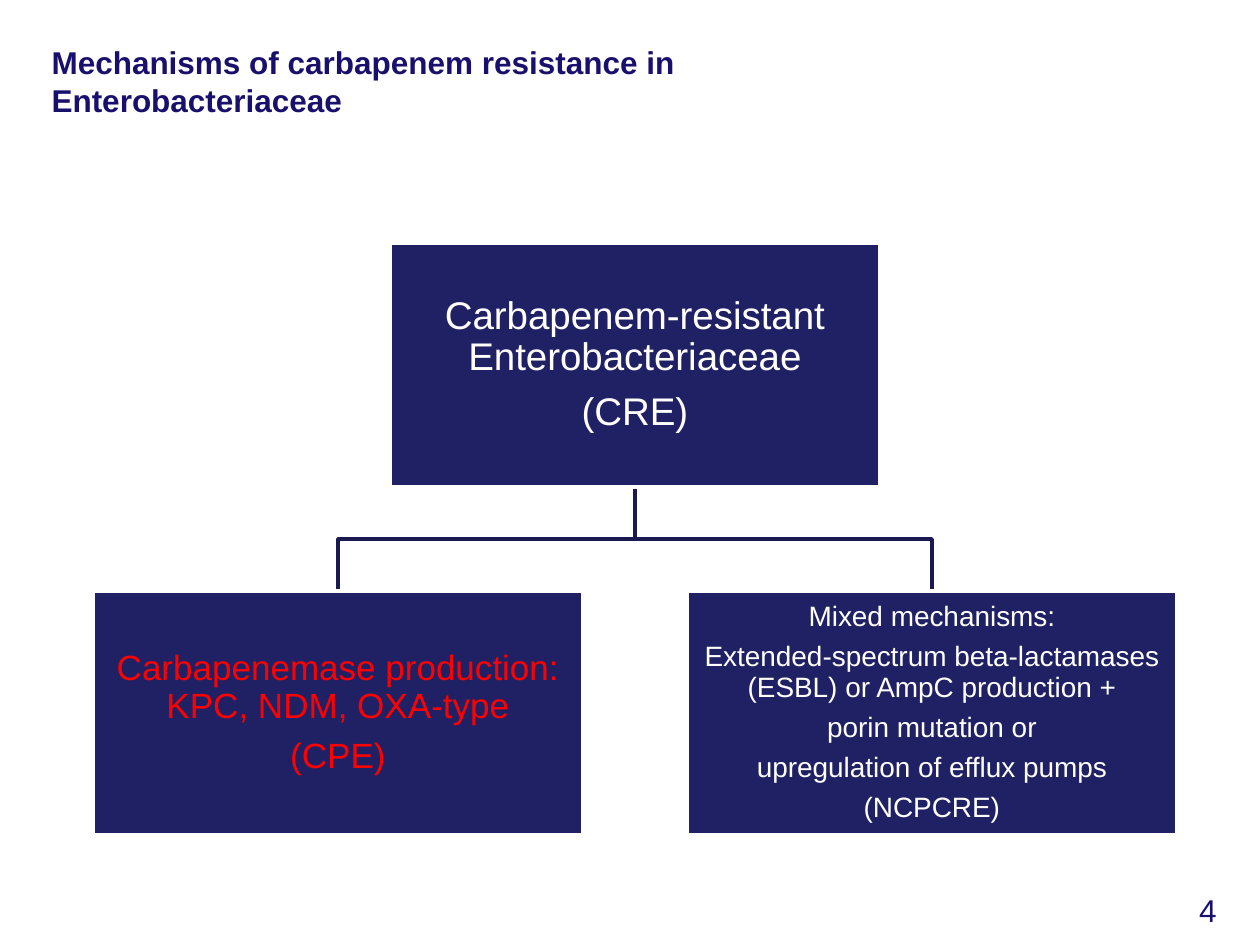
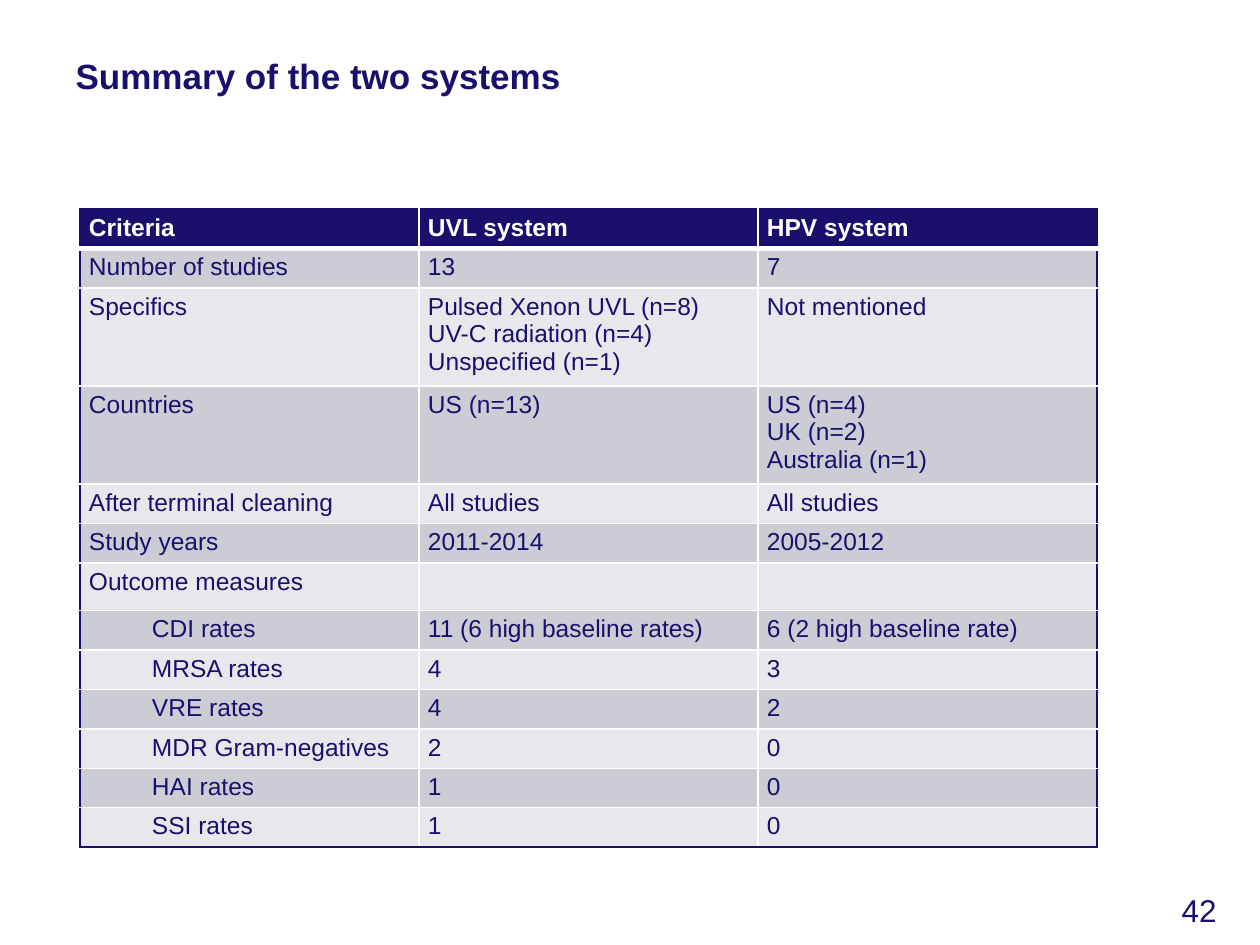
"""Build two slides: a tree of carbapenem resistance mechanisms and a table comparing two systems."""
from lxml import etree
from pptx import Presentation
from pptx.dml.color import RGBColor
from pptx.enum.shapes import MSO_SHAPE
from pptx.enum.text import MSO_ANCHOR, MSO_AUTO_SIZE, PP_ALIGN
from pptx.oxml.ns import qn
from pptx.util import Emu, Pt

RECT = MSO_SHAPE.RECTANGLE
MIDDLE = MSO_ANCHOR.MIDDLE
NO_FIT = MSO_AUTO_SIZE.NONE
LEFT, CENTER, RIGHT = PP_ALIGN.LEFT, PP_ALIGN.CENTER, PP_ALIGN.RIGHT

PX = 914400 / 126
SLIDE_SIZE = (1260, 945)
TITLE_ONLY = 5

THEME = {
    "font": "Arial",
    "navy": "19106D", "box": "202164", "branch": "1A1A50",
    "white": "FFFFFF", "red": "FF0000",
    "bands": ("CCCCD4", "E8E7EB"),
    "number_size": 18, "table_size": 14,
    "line": 2, "border": 1, "header_border": 3,
}

TREE = {
    "title": "Mechanisms of carbapenem resistance in Enterobacteriaceae",
    "title_size": 18,
    "title_box": (39, 37, 929, 87),
    "number": "4",
    "root": {"lines": ["Carbapenem-resistant Enterobacteriaceae", "(CRE)"],
             "size": 22, "color": "white"},
    "children": [
        {"lines": ["Carbapenemase production: KPC, NDM, OXA-type", "(CPE)"],
         "size": 20, "color": "red"},
        {"lines": ["Mixed mechanisms:",
                   "Extended-spectrum beta-lactamases (ESBL) or AmpC production +",
                   "porin mutation or", "upregulation of efflux pumps", "(NCPCRE)"],
         "size": 16, "color": "white"},
    ],
}

SUMMARY = {
    "title": "Summary of the two systems",
    "title_size": 20,
    "title_box": (63, 38, 902, 76),
    "number": "42",
    "header": ("Criteria", "UVL system", "HPV system"),
    "studies": [
        ("Number of studies", "13", "7"),
        ("Specifics", "Pulsed Xenon UVL (n=8)\nUV-C radiation (n=4)\nUnspecified (n=1)",
         "Not mentioned"),
        ("Countries", "US (n=13)", "US (n=4)\nUK (n=2)\nAustralia (n=1)"),
        ("After terminal cleaning", "All studies", "All studies"),
        ("Study years", "2011-2014", "2005-2012"),
        ("Outcome measures", "", ""),
    ],
    "outcomes": [
        ("CDI rates", "11 (6 high baseline rates)", "6 (2 high baseline rate)"),
        ("MRSA rates", "4", "3"),
        ("VRE rates", "4", "2"),
        ("MDR Gram-negatives", "2", "0"),
        ("HAI rates", "1", "0"),
        ("SSI rates", "1", "0"),
    ],
}

BOX_W, BOX_H = 490, 244
ROOT_TOP, CHILD_TOP = 243, 591
CHILD_LEFT, CHILD_STEP = 93, 594
TABLE_LEFT, TABLE_TOP, COL_W = 80, 209, 339
ROW_H, TALL_ROW_H, INDENT = 38, 94, 63
NUMBER_BOX = (1149, 885, 80, 50)


def px(*values):
    return [Emu(round(v * PX)) for v in values]


def rgb(name):
    return RGBColor.from_string(THEME.get(name, name))


def apply(target, values):
    for name, value in values.items():
        setattr(target, name, value)


def margins(x, y):
    mx, my = px(x, y)
    return {"margin_left": mx, "margin_right": mx, "margin_top": my, "margin_bottom": my}


def write(tf, lines, size, color, bold=False, **paragraph):
    for i, line in enumerate(lines):
        p = tf.paragraphs[0] if i == 0 else tf.add_paragraph()
        apply(p, paragraph)
        r = p.add_run()
        r.text = line
        apply(r.font, {"name": THEME["font"], "size": Pt(size), "bold": bold})
        r.font.color.rgb = rgb(color)


def add_slide(prs, content):
    s = prs.slides.add_slide(prs.slide_layouts[TITLE_ONLY])
    title = s.shapes.title
    apply(title, dict(zip(("left", "top", "width", "height"), px(*content["title_box"]))))
    apply(title.text_frame, {"auto_size": NO_FIT, "vertical_anchor": MIDDLE, "word_wrap": True})
    write(title.text_frame, [content["title"]], content["title_size"], "navy", True,
          alignment=LEFT)
    tf = s.shapes.add_textbox(*px(*NUMBER_BOX)).text_frame
    tf.word_wrap = True
    write(tf, [content["number"]], THEME["number_size"], "navy", alignment=RIGHT)
    return s


def add_box(s, left, top, node):
    sp = s.shapes.add_shape(RECT, *px(left, top, BOX_W, BOX_H))
    sp.shadow.inherit = False
    sp.fill.solid()
    sp.fill.fore_color.rgb = rgb("box")
    sp.line.color.rgb = rgb("white")
    sp.line.width = Pt(THEME["line"])
    tf = sp.text_frame
    apply(tf, {"word_wrap": True, "vertical_anchor": MIDDLE, **margins(2, 2)})
    write(tf, node["lines"], node["size"], node["color"], alignment=CENTER, line_spacing=0.9)
    for p in tf.paragraphs[1:]:
        p.space_before = Pt(round(node["size"] * 0.35, 1))


def add_branch(s, start_x, end_x):
    start_y = ROOT_TOP + BOX_H
    middle = (start_y + CHILD_TOP) / 2
    builder = s.shapes.build_freeform(start_x, start_y, scale=PX)
    builder.add_line_segments([(start_x, middle), (end_x, middle), (end_x, CHILD_TOP)],
                              close=False)
    sp = builder.convert_to_shape()
    sp.shadow.inherit = False
    sp.fill.background()
    sp.line.color.rgb = rgb("branch")
    sp.line.width = Pt(THEME["line"])


def build_tree(prs):
    s = add_slide(prs, TREE)
    lefts = [CHILD_LEFT + i * CHILD_STEP for i in range(len(TREE["children"]))]
    root_left = (lefts[0] + lefts[-1]) / 2
    for left in lefts:
        add_branch(s, root_left + BOX_W / 2, left + BOX_W / 2)
    add_box(s, root_left, ROOT_TOP, TREE["root"])
    for left, node in zip(lefts, TREE["children"]):
        add_box(s, left, CHILD_TOP, node)


def set_borders(cell, borders):
    tc_pr = cell._tc.get_or_add_tcPr()
    for i, (side, (color, width)) in enumerate(borders.items()):
        ln = etree.Element(qn(f"a:ln{side}"), w=str(Pt(width)))
        fill = etree.SubElement(ln, qn("a:solidFill"))
        etree.SubElement(fill, qn("a:srgbClr"), val=THEME[color])
        tc_pr.insert(i, ln)


def build_summary(prs):
    s = add_slide(prs, SUMMARY)
    rows = [SUMMARY["header"], *SUMMARY["studies"], *SUMMARY["outcomes"]]
    heights = [TALL_ROW_H if any("\n" in text for text in row) else ROW_H for row in rows]
    last_row, last_col = len(rows) - 1, len(rows[0]) - 1
    first_outcome = len(rows) - len(SUMMARY["outcomes"])
    table = s.shapes.add_table(len(rows), len(rows[0]), *px(
        TABLE_LEFT, TABLE_TOP, COL_W * len(rows[0]), sum(heights))).table
    for col in table.columns:
        col.width = px(COL_W)[0]
    for i, (row, height) in enumerate(zip(rows, heights)):
        table.rows[i].height = px(height)[0]
        header = i == 0
        for j, text in enumerate(row):
            cell = table.cell(i, j)
            apply(cell, margins(9, 5))
            cell.fill.solid()
            cell.fill.fore_color.rgb = rgb("navy" if header else THEME["bands"][(i - 1) % 2])
            thin, thick = THEME["border"], THEME["header_border"]
            set_borders(cell, {
                "L": ("navy" if j == 0 else "white", thin),
                "R": ("navy" if j == last_col else "white", thin),
                "T": ("navy" if header else "white", thick if i == 1 else thin),
                "B": ("navy" if i == last_row else "white", thick if header else thin),
            })
            write(cell.text_frame, text.split("\n"), THEME["table_size"],
                  "white" if header else "navy", header)
            if j == 0 and i >= first_outcome:
                p = cell.text_frame.paragraphs[0]
                p.level = 1
                p._p.get_or_add_pPr().set("marL", str(px(INDENT)[0]))


def main():
    prs = Presentation()
    prs.slide_width, prs.slide_height = px(*SLIDE_SIZE)
    build_tree(prs)
    build_summary(prs)
    prs.save("out.pptx")


if __name__ == "__main__":
    main()
